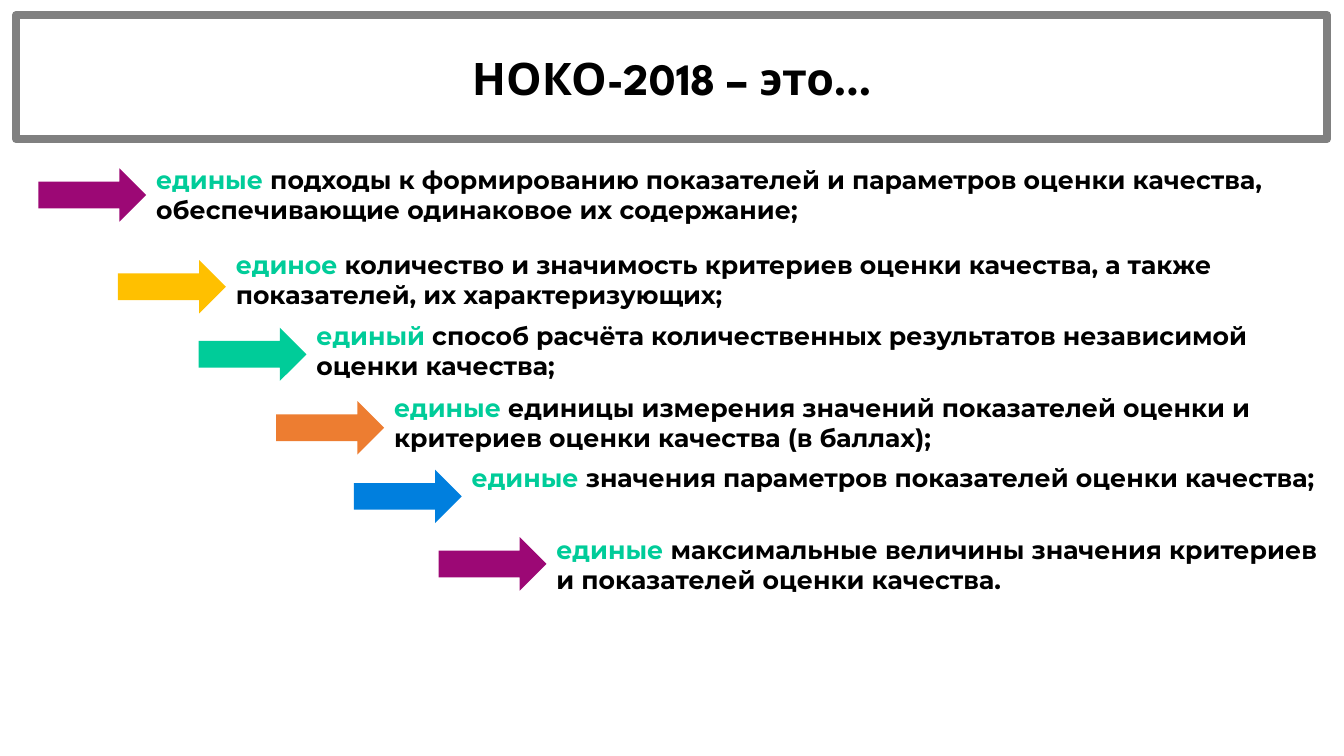
from pptx import Presentation
from pptx.dml.color import RGBColor
from pptx.enum.shapes import MSO_SHAPE as Shape
from pptx.enum.text import MSO_ANCHOR as Anchor, PP_ALIGN as Align
from pptx.util import Inches, Pt

WIDTH, HEIGHT = 13.33, 7.5
ARROW_W, ARROW_H = 1.07, 0.53
BLACK, GREEN, PURPLE = "000000", "00CC99", "9C0875"

# text left, text top, text right, arrow top, arrow colour, key word, rest
POINTS = [
    (1.45, 1.58, 13.03, 1.67, PURPLE, "единые",
     " подходы к формированию показателей и параметров оценки качества, "
     "обеспечивающие одинаковое их содержание;"),
    (2.24, 2.42, WIDTH, 2.58, "FFC000", "единое",
     " количество и значимость критериев оценки качества, а также "
     "показателей, их характеризующих;"),
    (3.04, 3.13, WIDTH, 3.25, GREEN, "единый",
     " способ расчёта количественных результатов независимой "
     "оценки качества;"),
    (3.81, 3.84, WIDTH, 3.98, "ED7D31", "единые",
     " единицы измерения значений показателей оценки и "
     "критериев оценки качества (в баллах);"),
    (4.58, 4.54, WIDTH, 4.66, "007FDE", "единые",
     " значения параметров показателей оценки качества;"),
    (5.42, 5.25, WIDTH, 5.33, PURPLE, "единые",
     " максимальные величины значения критериев "
     "и показателей оценки качества."),
]


def color(code):
    return RGBColor.from_string(code)


def write(par, text, size=18, font="Montserrat", ink=BLACK, bold=True):
    run = par.add_run()
    run.text = text
    run.font.size = Pt(size)
    run.font.name = font
    run.font.bold = bold
    run.font.color.rgb = color(ink)


def add_title(slide, text):
    box = slide.shapes.add_shape(
        Shape.RECTANGLE, Inches(0.16), Inches(0.15), Inches(13), Inches(1.23))
    box.shadow.inherit = False
    box.fill.background()
    box.line.color.rgb = color("808080")
    box.line.width = Pt(6)
    frame = box.text_frame
    frame.word_wrap = True
    frame.vertical_anchor = Anchor.MIDDLE
    par = frame.paragraphs[0]
    par.alignment = Align.CENTER
    write(par, text, size=32, font="League Spartan")


def add_arrow(slide, left, top, fill):
    arrow = slide.shapes.add_shape(
        Shape.RIGHT_ARROW, Inches(left), Inches(top),
        Inches(ARROW_W), Inches(ARROW_H))
    arrow.shadow.inherit = False
    arrow.fill.solid()
    arrow.fill.fore_color.rgb = color(fill)
    arrow.line.fill.background()


def add_point(slide, left, top, right, key, rest):
    """Add a text box whose key word stands out in green."""
    box = slide.shapes.add_textbox(
        Inches(left), Inches(top), Inches(right - left), Inches(0.71))
    frame = box.text_frame
    frame.word_wrap = True
    par = frame.paragraphs[0]
    write(par, key, ink=GREEN)
    write(par, rest)


def main():
    deck = Presentation()
    deck.slide_width, deck.slide_height = Inches(WIDTH), Inches(HEIGHT)
    slide = deck.slides.add_slide(deck.slide_layouts[6])
    add_title(slide, "НОКО-2018 – это…")
    for left, top, right, arrow_top, fill, key, rest in POINTS:
        add_arrow(slide, left - ARROW_W, arrow_top, fill)
        add_point(slide, left, top, right, key, rest)
    deck.save("out.pptx")


if __name__ == "__main__":
    main()
